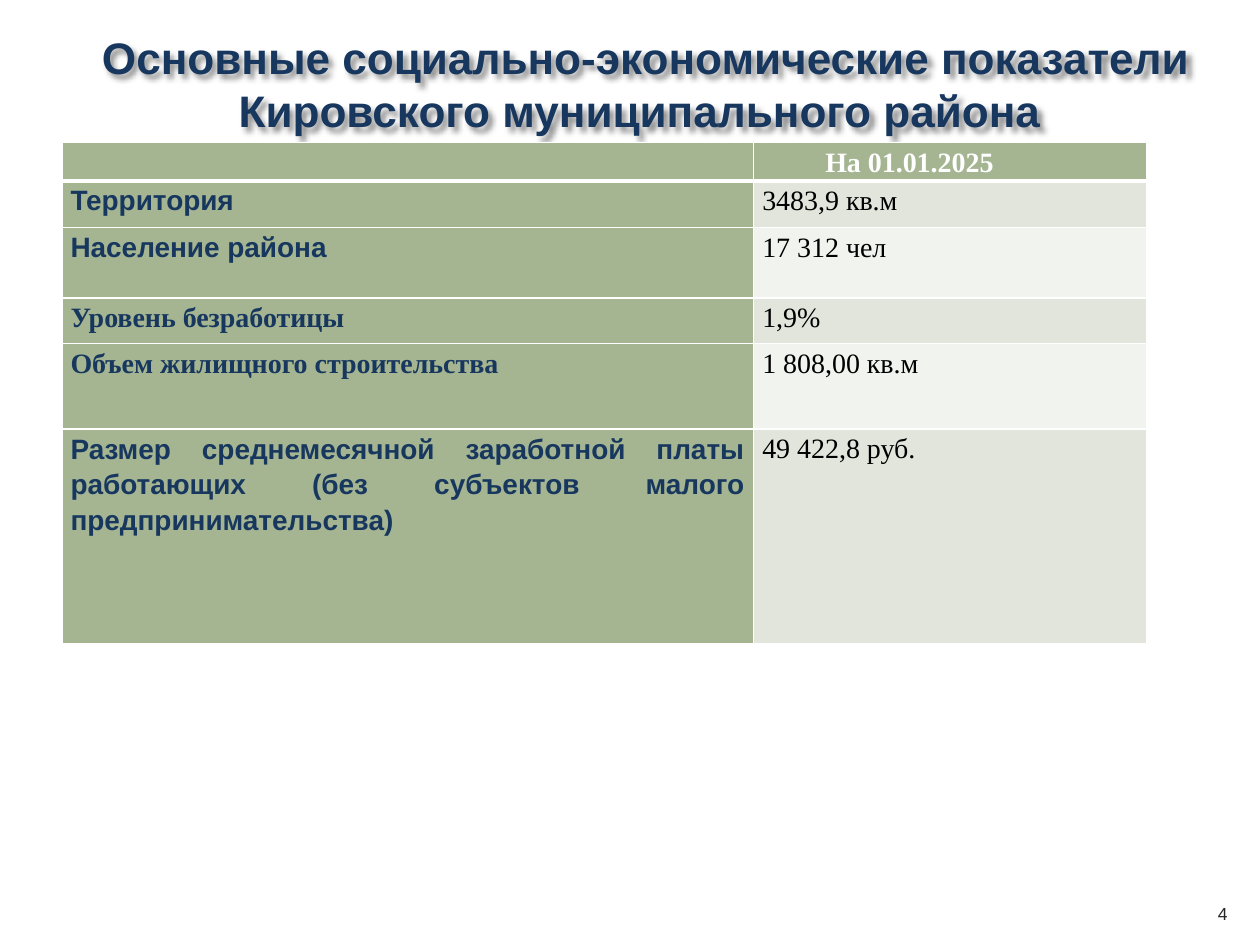
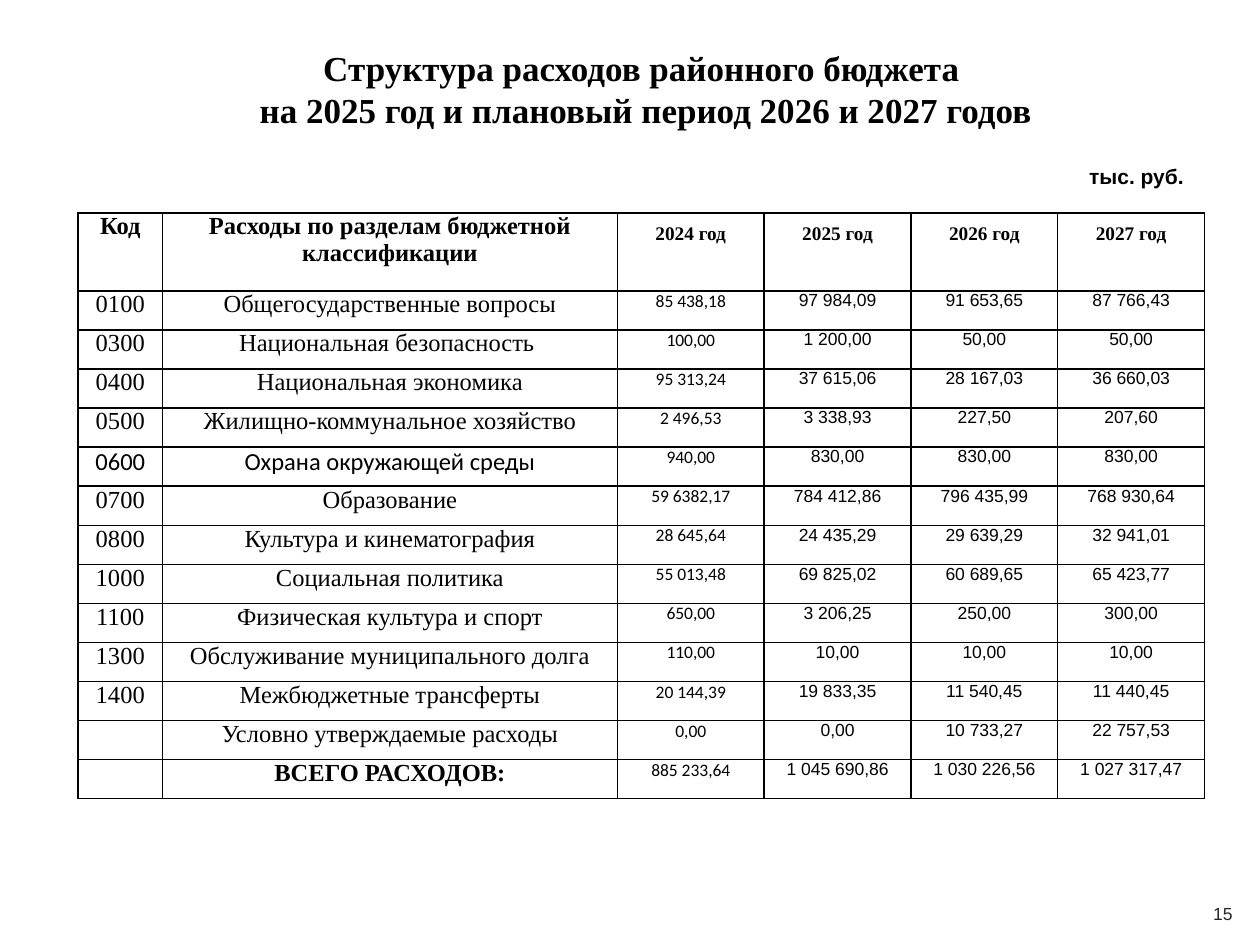
from lxml import etree
from pptx import Presentation
from pptx.dml.color import RGBColor
from pptx.enum.text import MSO_ANCHOR, PP_ALIGN
from pptx.oxml import parse_xml
from pptx.oxml.ns import nsdecls, qn
from pptx.util import Inches, Pt

CENTER, JUSTIFY = PP_ALIGN.CENTER, PP_ALIGN.JUSTIFY
MIDDLE = MSO_ANCHOR.MIDDLE
SANS, SERIF, ROUND = "Arial", "Times New Roman", "Calibri"
NAVY = RGBColor(0x17, 0x37, 0x5E)
BLACK = RGBColor(0, 0, 0)
WHITE = RGBColor(0xFF, 0xFF, 0xFF)
GREY = RGBColor(0x26, 0x26, 0x26)
SAGE = RGBColor(0xA5, 0xB5, 0x92)
BANDS = RGBColor(0xE1, 0xE5, 0xDC), RGBColor(0xF0, 0xF3, 0xEE)

deck = Presentation()
deck.slide_width, deck.slide_height = Inches(10), Inches(7.5)
UNIT = deck.slide_width // 10  # the slide is a grid of 10 columns by 7.5 rows
blank = deck.slide_layouts[6]


def write(frame, text, font, size, color, bold=False, align=CENTER):
    para = frame.paragraphs[0]
    para.text = text
    para.alignment = align
    para.font.name, para.font.size = font, Pt(size)
    para.font.color.rgb, para.font.bold = color, bold
    return para


def add_ruled_table(slide, left, top, widths, heights, rule_color):
    """Add an empty table with 1 pt rules and no fill; sizes are in grid units."""
    size = [int(UNIT * n) for n in (left, top, sum(widths), sum(heights))]
    table = slide.shapes.add_table(len(heights), len(widths), *size).table
    table.first_row = table.horz_banding = False
    for column, width in zip(table.columns, widths):
        column.width = int(UNIT * width)
    for row, height in zip(table.rows, heights):
        row.height = int(UNIT * height)
    for cell in table.iter_cells():
        cell.margin_left = cell.margin_right = int(UNIT * 0.07)
        cell.margin_top = cell.margin_bottom = 0
        for side in ("a:lnL", "a:lnR", "a:lnT", "a:lnB"):
            rule = etree.SubElement(cell._tc.get_or_add_tcPr(), qn(side), w=str(Pt(1)))
            fill = etree.SubElement(rule, qn("a:solidFill"))
            etree.SubElement(fill, qn("a:srgbClr"), val=str(rule_color))
        cell.fill.background()
    return table


# Titles, page numbers and the unit label
indicators_slide = deck.slides.add_slide(blank)
budget_slide = deck.slides.add_slide(blank)
title_1 = "Основные социально-экономические показатели Кировского муниципального района "
title_2 = "Структура расходов районного бюджета \vна 2025 год и плановый период 2026 и 2027 годов"
PAGE_NUMBER = (9.45, 7.05, 0.51, 0.4)
boxes = [
    (indicators_slide, (0.5, 0.18, 9.25, 0.97), title_1, SANS, 25.2, NAVY, True),
    (indicators_slide, PAGE_NUMBER, "4", SANS, 10, GREY, False),
    (budget_slide, (0.5, 0.26, 9.25, 0.89), title_2, SERIF, 20, BLACK, True),
    (budget_slide, PAGE_NUMBER, "15", SANS, 10, GREY, False),
    (budget_slide, (8.54, 1.25, 0.96, 0.3), "тыс. руб.", SANS, 12, BLACK, True),
]
for slide, place, text, *look in boxes:
    box = slide.shapes.add_textbox(*[int(UNIT * n) for n in place])
    box.text_frame.word_wrap = text != "тыс. руб."
    box.text_frame.vertical_anchor = MIDDLE
    write(box.text_frame, text, *look)

title_box = indicators_slide.shapes[0]
title_box._element.spPr.append(parse_xml(
    f'<a:effectLst {nsdecls("a")}>'
    '<a:outerShdw blurRad="38100" dist="38100" dir="2700000" algn="tl">'
    '<a:srgbClr val="000000"><a:alpha val="43000"/></a:srgbClr>'
    '</a:outerShdw></a:effectLst>'))

# Slide 1: social and economic indicators
indicators = [
    ("", "На 01.01.2025", SANS),
    ("Территория", "3483,9 кв.м", SANS),
    ("Население района", "17 312 чел", SANS),
    ("Уровень безработицы", "1,9%", SERIF),
    ("Объем жилищного строительства ", "1 808,00 кв.м", SERIF),
    ("Размер среднемесячной заработной платы работающих "
     "(без субъектов малого предпринимательства) ", "49 422,8 руб.", SANS),
]
table = add_ruled_table(indicators_slide, 0.49, 1.13, [5.49, 3.12],
                        [0.28, 0.37, 0.56, 0.36, 0.68, 1.7], WHITE)
for number, (name, value, font) in enumerate(indicators):
    header = number == 0
    name_cell, value_cell = table.cell(number, 0), table.cell(number, 1)
    name_para = write(name_cell.text_frame, name, font, 16, NAVY, True, JUSTIFY)
    value_para = write(value_cell.text_frame, value, SERIF, 16,
                       WHITE if header else BLACK, header, JUSTIFY)
    name_para.line_spacing = value_para.line_spacing = 1.15
    fills = SAGE, SAGE if header else BANDS[(number - 1) % 2]
    for cell, color in zip((name_cell, value_cell), fills):
        cell.fill.solid()
        cell.fill.fore_color.rgb = color
        if header:
            cell._tc.tcPr.find(qn("a:lnB")).set("w", str(Pt(3)))
            table.cell(1, 0 if cell is name_cell else 1)._tc.tcPr.find(
                qn("a:lnT")).set("w", str(Pt(3)))
    if header:
        value_para._p.get_or_add_pPr().set("indent", str(Inches(0.5)))

# Slide 2: budget expenses by section
expenses = [
    ("Код", "Расходы по разделам бюджетной классификации",
     "2024 год", "2025 год", "2026 год", "2027 год"),
    ("0100", "Общегосударственные вопросы", "85 438,18", "97 984,09", "91 653,65", "87 766,43"),
    ("0300", "Национальная безопасность ", "100,00", "1 200,00", "50,00", "50,00"),
    ("0400", "Национальная экономика", "95 313,24", "37 615,06", "28 167,03", "36 660,03"),
    ("0500", "Жилищно-коммунальное хозяйство", "2 496,53", "3 338,93", "227,50", "207,60"),
    ("0600", "Охрана окружающей среды", "940,00", "830,00", "830,00", "830,00"),
    ("0700", "Образование", "59 6382,17", "784 412,86", "796 435,99", "768 930,64"),
    ("0800", "Культура и кинематография", "28 645,64", "24 435,29", "29 639,29", "32 941,01"),
    ("1000", "Социальная политика", "55 013,48", "69 825,02", "60 689,65", "65 423,77"),
    ("1100", "Физическая культура и спорт", "650,00", "3 206,25", "250,00", "300,00"),
    ("1300", "Обслуживание муниципального долга", "110,00", "10,00", "10,00", "10,00"),
    ("1400", "Межбюджетные трансферты", "20 144,39", "19 833,35", "11 540,45", "11 440,45"),
    ("", "Условно утверждаемые расходы", "0,00", "0,00", "10 733,27", "22 757,53"),
    ("", "ВСЕГО РАСХОДОВ:", "885 233,64", "1 045 690,86", "1 030 226,56", "1 027 317,47"),
]
table = add_ruled_table(budget_slide, 0.62, 1.69, [0.67, 3.61] + [1.165] * 4,
                        [0.62] + [0.31] * 13, BLACK)
for number, record in enumerate(expenses):
    header = number == 0
    total = number == len(expenses) - 1
    label_font = ROUND if record[0] == "0600" else SERIF
    for column, text in enumerate(record):
        is_label = column < 2
        if is_label:
            font, size = label_font, 14
        elif header:
            font, size = SERIF, 11
        else:
            font, size = ROUND if column == 2 else SANS, 10
        para = write(table.cell(number, column).text_frame, text, font, size, BLACK,
                     header or (total and is_label))
        if header and not is_label:
            para.line_spacing = 1.5

deck.save("out.pptx")
